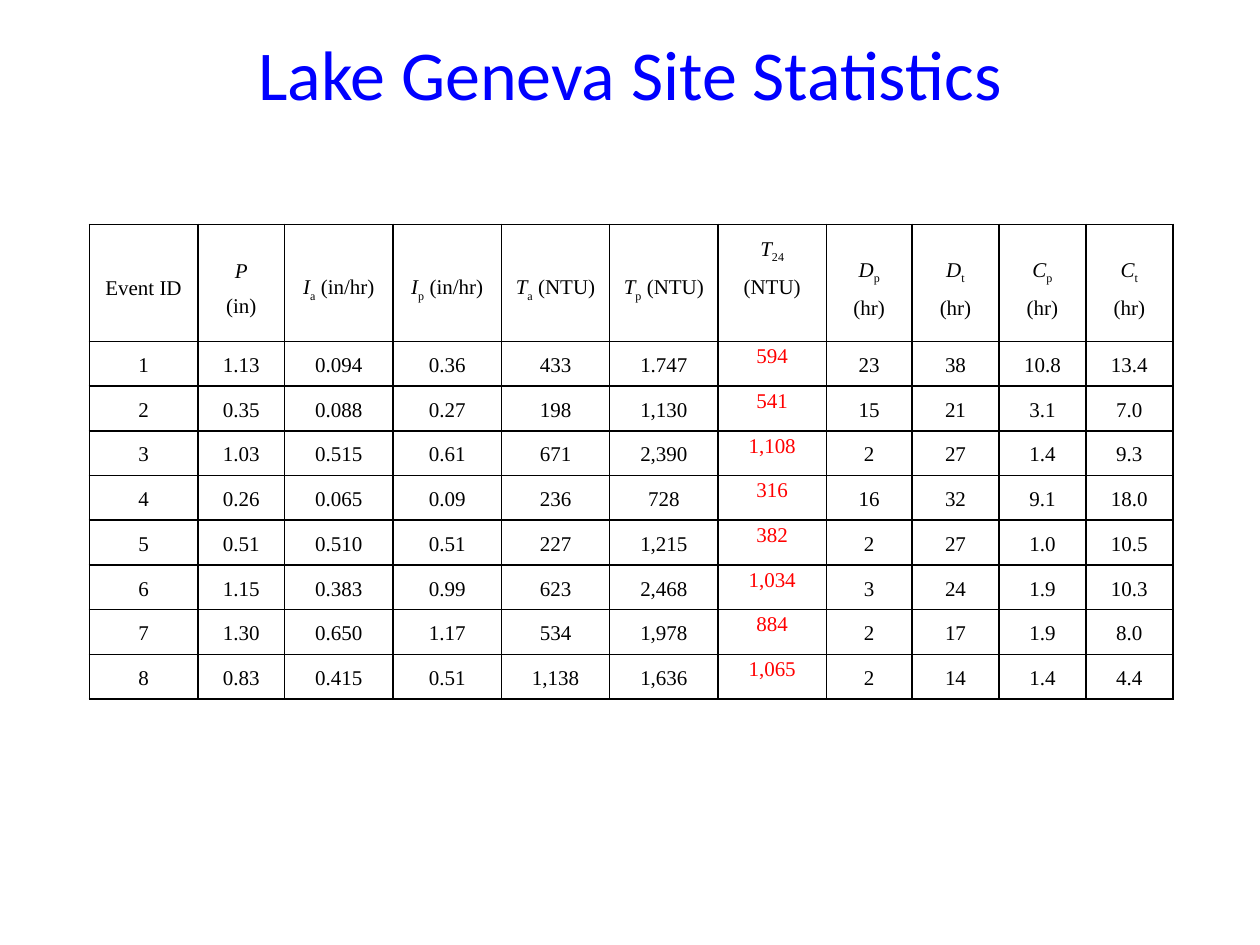
from lxml.etree import SubElement
from pptx import Presentation
from pptx.dml.color import RGBColor
from pptx.enum.text import MSO_ANCHOR, PP_ALIGN
from pptx.oxml.ns import qn
from pptx.util import Inches, Pt

BLACK, WHITE, BLUE, RED = "000000", "FFFFFF", "0000FF", "FF0000"
WIDE, NARROW = 0.86, 0.69
COLUMN_WIDTHS = [WIDE, NARROW] + [WIDE] * 5 + [0.68] + [NARROW] * 3
HEADER_HEIGHT = 0.93
PEAK_COLUMN = 6  # the T24 column, top-aligned with red values

# Each heading: symbol, subscript, unit, whether the unit has its own line
HEADINGS = [
    ("", "", "Event ID", False),
    ("P", "", "(in)", True),
    ("I", "a", " (in/hr)", False),
    ("I", "p", " (in/hr)", False),
    ("T", "a", " (NTU)", False),
    ("T", "p", " (NTU)", False),
    ("T", "24", "(NTU)", True),
    ("D", "p", "(hr)", True),
    ("D", "t", "(hr)", True),
    ("C", "p", "(hr)", True),
    ("C", "t", "(hr)", True),
]
EVENTS = [
    ["1", "1.13", "0.094", "0.36", "433", "1.747", "594", "23", "38", "10.8", "13.4"],
    ["2", "0.35", "0.088", "0.27", "198", "1,130", "541", "15", "21", "3.1", "7.0"],
    ["3", "1.03", "0.515", "0.61", "671", "2,390", "1,108", "2", "27", "1.4", "9.3"],
    ["4", "0.26", "0.065", "0.09", "236", "728", "316", "16", "32", "9.1", "18.0"],
    ["5", "0.51", "0.510", "0.51", "227", "1,215", "382", "2", "27", "1.0", "10.5"],
    ["6", "1.15", "0.383", "0.99", "623", "2,468", "1,034", "3", "24", "1.9", "10.3"],
    ["7", "1.30", "0.650", "1.17", "534", "1,978", "884", "2", "17", "1.9", "8.0"],
    ["8", "0.83", "0.415", "0.51", "1,138", "1,636", "1,065", "2", "14", "1.4", "4.4"],
]


def color(value):
    return RGBColor.from_string(value)


def set_all(target, values):
    for name, value in values.items():
        setattr(target, name, value)


def add_span(para, text, size=12, font="Times New Roman", ink=BLACK,
             italic=False, subscript=False):
    span = para.add_run()
    span.text = text
    set_all(span.font, {"size": Pt(size), "name": font, "italic": italic})
    span.font.color.rgb = color(ink)
    if subscript:
        span._r.get_or_add_rPr().set("baseline", "-25000")


def format_para(para, spacing):
    set_all(para, {"alignment": PP_ALIGN.CENTER, "line_spacing": spacing})


def add_title(page, left, top, width, height):
    box = page.shapes.add_textbox(Inches(left), Inches(top), Inches(width), Inches(height))
    frame = box.text_frame
    set_all(frame, {"word_wrap": True, "vertical_anchor": MSO_ANCHOR.MIDDLE})
    para = frame.paragraphs[0]
    para.alignment = PP_ALIGN.CENTER
    add_span(para, "Lake Geneva Site Statistics", 40, "Calibri", BLUE)


def format_cell(cell, anchor):
    set_all(cell, {
        "margin_left": Inches(0.07), "margin_right": Inches(0.07),
        "margin_top": 0, "margin_bottom": 0, "vertical_anchor": anchor,
    })
    # Borders come before the fill in the cell properties
    properties = cell._tc.get_or_add_tcPr()
    for side in ("a:lnL", "a:lnR", "a:lnT", "a:lnB"):
        line = SubElement(properties, qn(side), w=str(Pt(1)))
        fill = SubElement(line, qn("a:solidFill"))
        SubElement(fill, qn("a:srgbClr"), val=BLACK)
    cell.fill.solid()
    cell.fill.fore_color.rgb = color(WHITE)


def write_heading(frame, symbol, subscript, unit, own_line):
    para = frame.paragraphs[0]
    format_para(para, 1.5)
    if symbol:
        add_span(para, symbol, italic=True)
    if subscript:
        add_span(para, subscript, subscript=True)
    if own_line:
        para = frame.add_paragraph()
        format_para(para, 1.5)
    add_span(para, unit)


def write_value(frame, text, ink):
    para = frame.paragraphs[0]
    format_para(para, 1.15)
    add_span(para, text, ink=ink)


def add_statistics(page, left, top, width, height):
    table = page.shapes.add_table(
        len(EVENTS) + 1, len(HEADINGS),
        Inches(left), Inches(top), Inches(width), Inches(height)).table
    set_all(table, {"first_row": False, "horz_banding": False})
    for column, column_width in zip(table.columns, COLUMN_WIDTHS):
        column.width = Inches(column_width)
    event_height = (height - HEADER_HEIGHT) / len(EVENTS)
    for index, row in enumerate(table.rows):
        row.height = Inches(event_height if index else HEADER_HEIGHT)
        for number, cell in enumerate(row.cells):
            is_peak = number == PEAK_COLUMN
            format_cell(cell, MSO_ANCHOR.TOP if is_peak else MSO_ANCHOR.MIDDLE)
            if index == 0:
                write_heading(cell.text_frame, *HEADINGS[number])
            else:
                write_value(cell.text_frame, EVENTS[index - 1][number],
                            RED if is_peak else BLACK)


def main():
    deck = Presentation()
    set_all(deck, {"slide_width": Inches(10), "slide_height": Inches(7.5)})
    page = deck.slides.add_slide(deck.slide_layouts[6])
    add_title(page, 0.5, 0.3, 9, 0.55)
    add_statistics(page, 0.71, 1.78, 8.59, 3.77)
    deck.save("out.pptx")


if __name__ == "__main__":
    main()
